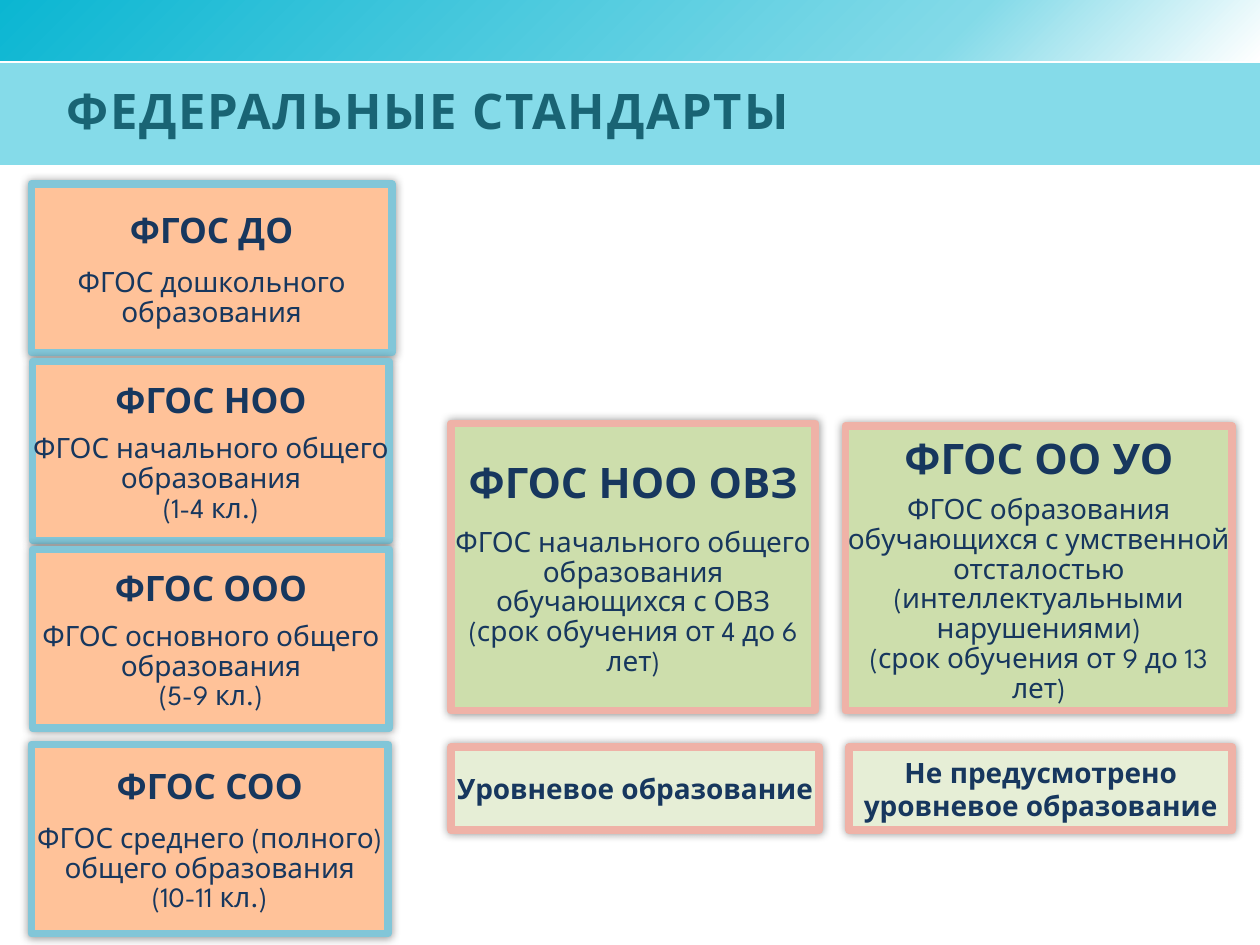
import copy

import pptx
import pptx.dml.color
import pptx.enum.shapes
import pptx.enum.text
import pptx.oxml
import pptx.oxml.ns
import pptx.util
from pptx.util import Inches

RGBColor = pptx.dml.color.RGBColor
TEAL = RGBColor(0x0B, 0xB6, 0xD2)
SKY = RGBColor(0x83, 0xDA, 0xE8)
WHITE = RGBColor(0xFF, 0xFF, 0xFF)
BAND = RGBColor(0x85, 0xDB, 0xE9)
TITLE = RGBColor(0x19, 0x64, 0x74)
NAVY = RGBColor(0x17, 0x37, 0x5E)
PEACH = RGBColor(0xFF, 0xC2, 0x99)
BLUE = RGBColor(0x82, 0xC6, 0xD8)
GREEN = RGBColor(0xCD, 0xDE, 0xAC)
PALE_GREEN = RGBColor(0xE6, 0xEE, 0xD6)
PINK = RGBColor(0xEF, 0xB2, 0xA7)
FONT = "League Spartan"

GLOW = (
    f'<a:effectLst {pptx.oxml.ns.nsdecls("a")}>'
    '<a:outerShdw blurRad="63500" dist="0" dir="0" algn="ctr" rotWithShape="0">'
    '<a:srgbClr val="000000"><a:alpha val="40000"/></a:srgbClr>'
    "</a:outerShdw></a:effectLst>"
)

LEVELS = [
    ((0.25, 1.46, 2.86, 1.34), "ФГОС ДО", ["ФГОС дошкольного образования"], 10),
    ((0.26, 2.87, 2.83, 1.42), "ФГОС НОО",
     ["ФГОС начального общего образования", "(1-4 кл.)"], 8),
    ((0.26, 4.36, 2.83, 1.42), "ФГОС ООО",
     ["ФГОС основного общего образования", "(5-9 кл.)"], 8),
    ((0.25, 5.91, 2.83, 1.5), "ФГОС СОО",
     ["ФГОС среднего (полного) общего образования", "(10-11 кл.)"], 10),
]
SPECIAL = [
    ((3.58, 3.36, 2.89, 2.28), "ФГОС НОО ОВЗ",
     ["ФГОС начального общего образования обучающихся с ОВЗ",
      "(срок обучения от 4 до 6 лет)"], 12, 0),
    ((6.71, 3.38, 3.07, 2.26), "ФГОС ОО УО",
     ["ФГОС образования обучающихся с умственной отсталостью "
      "(интеллектуальными нарушениями)",
      "(срок обучения от 9 до 13 лет)"], 7, 12),
]
NOTES = [
    ((3.58, 5.93, 2.92, 0.66), "Уровневое образование"),
    ((6.74, 5.93, 3.04, 0.66), "Не предусмотрено уровневое образование"),
]


def style(font, size, color, bold):
    """Apply the slide's typeface with a size, colour and weight."""
    font.name = FONT
    font.size = pptx.util.Pt(size)
    font.color.rgb = color
    font.bold = bold


def add_band(page, box, color):
    """Add a full-width rectangle without outline or shadow."""
    band = page.shapes.add_shape(
        pptx.enum.shapes.MSO_SHAPE.RECTANGLE, *map(Inches, box))
    band.shadow.inherit = False
    band.fill.solid()
    band.fill.fore_color.rgb = color
    band.line.fill.background()
    return band


def add_header(page, box, title):
    """Draw the gradient strip and the title band inside the box."""
    left, top, width, height = box
    strip = add_band(page, (left, top, width, 0.5), SKY)
    strip.fill.gradient()
    strip.fill.gradient_angle = 315
    first = strip.fill.gradient_stops[0]
    stop_list = strip.fill._fill._gradFill.gsLst
    stop_list.append(copy.deepcopy(stop_list[0]))
    stops = zip(strip.fill.gradient_stops, (0, 0.75, 1), (TEAL, SKY, WHITE))
    for stop, position, color in stops:
        stop.position = position
        stop.color.rgb = color

    add_band(page, (left, top + 0.52, width, height - 0.52), BAND)
    heading = page.shapes.add_textbox(
        Inches(left + 0.43), Inches(top + 0.54), Inches(9.09), Inches(0.79))
    frame = heading.text_frame
    frame.word_wrap = True
    frame.vertical_anchor = pptx.enum.text.MSO_ANCHOR.MIDDLE
    frame.text = title
    para = frame.paragraphs[0]
    para.line_spacing = 0.8
    span = para.runs[0]
    style(span.font, 28, TITLE, True)
    span.font._element.set("spc", "100")


def add_card(page, box, fill, border, heading, size, details=(), gap=12, after=0):
    """Draw a glowing framed card with a bold heading and detail lines."""
    card = page.shapes.add_shape(
        pptx.enum.shapes.MSO_SHAPE.RECTANGLE, *map(Inches, box))
    card.fill.solid()
    card.fill.fore_color.rgb = fill
    card.line.color.rgb = border
    card.line.width = pptx.util.Pt(4.33)
    card._element.spPr.append(pptx.oxml.parse_xml(GLOW))
    frame = card.text_frame
    frame.word_wrap = True
    frame.vertical_anchor = pptx.enum.text.MSO_ANCHOR.MIDDLE
    frame.margin_left = frame.margin_right = 0
    frame.margin_top = frame.margin_bottom = 0
    frame.text = "\n".join([heading, *details])
    for index, para in enumerate(frame.paragraphs):
        para.alignment = pptx.enum.text.PP_ALIGN.CENTER
        style(para.runs[0].font, 16 if index else size, NAVY, index == 0)
        if index:
            para.line_spacing = pptx.util.Pt(17)
    frame.paragraphs[0].space_after = pptx.util.Pt(gap)
    if details:
        frame.paragraphs[-1].space_after = pptx.util.Pt(after)


def main():
    """Build the slide and save the deck."""
    deck = pptx.Presentation()
    deck.slide_width, deck.slide_height = Inches(10), Inches(7.5)
    page = deck.slides.add_slide(deck.slide_layouts[6])
    add_header(page, (0, -0.02, 10, 1.33), "ФЕДЕРАЛЬНЫЕ СТАНДАРТЫ")
    for box, heading, details, gap in LEVELS:
        add_card(page, box, PEACH, BLUE, heading, 20, details, gap, 4)
    for box, heading, details, gap, after in SPECIAL:
        add_card(page, box, GREEN, PINK, heading, 24, details, gap, after)
    for box, note in NOTES:
        add_card(page, box, PALE_GREEN, PINK, note, 16)
    deck.save("out.pptx")


if __name__ == "__main__":
    main()
